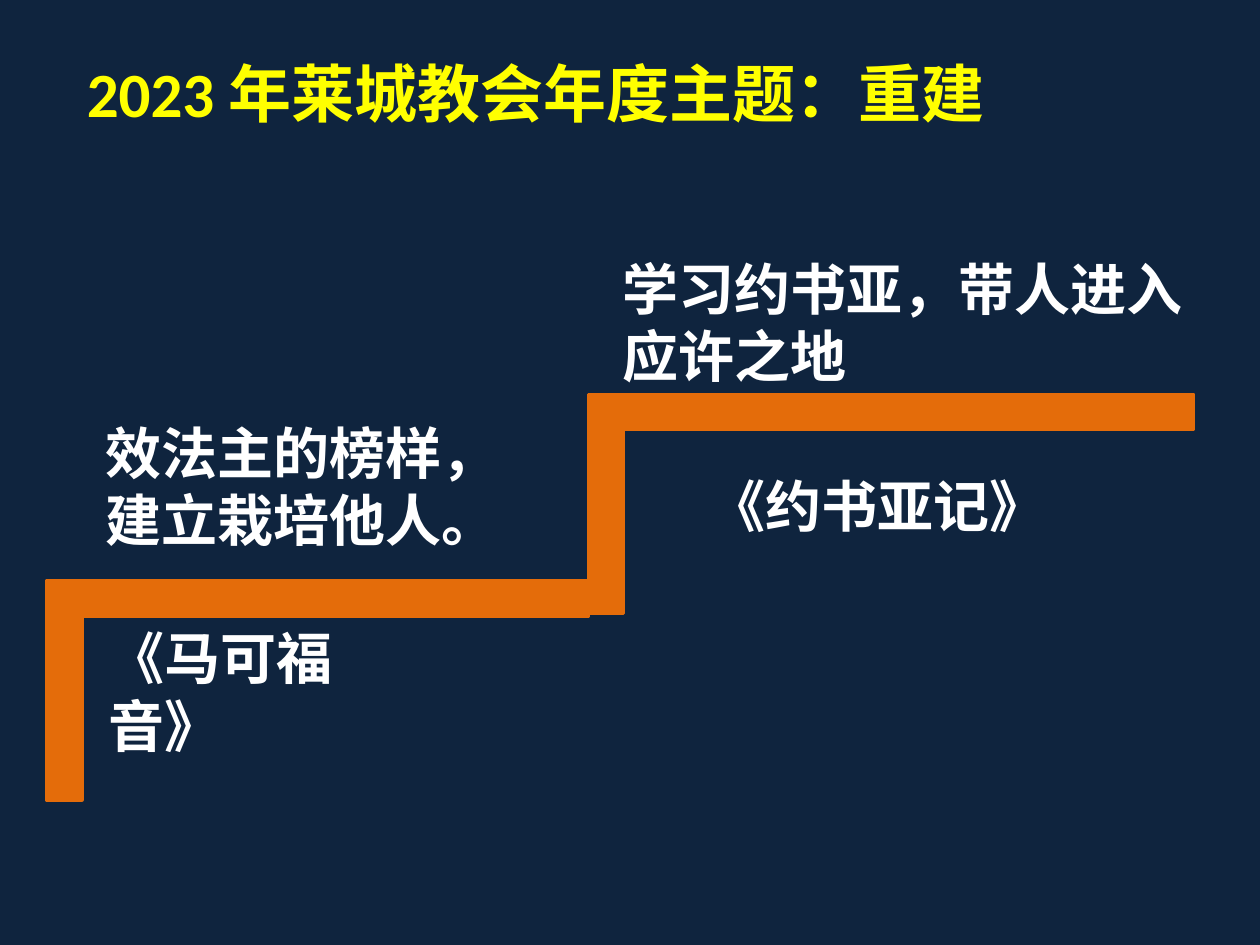
import pptx
import pptx.util
import pptx.dml.color
import pptx.enum.shapes
import pptx.enum.text

Pt = pptx.util.Pt
RGBColor = pptx.dml.color.RGBColor
NAVY = RGBColor(0x0F, 0x24, 0x3E)
ORANGE = RGBColor(0xE4, 0x6C, 0x0A)
YELLOW = RGBColor(0xFF, 0xFF, 0x00)
WHITE = RGBColor(0xFF, 0xFF, 0xFF)

prs = pptx.Presentation()
prs.slide_width, prs.slide_height = Pt(720), Pt(540)
s = prs.slides.add_slide(prs.slide_layouts[6])
s.background.fill.solid()
s.background.fill.fore_color.rgb = NAVY

steps = [
    (118.8, 239.76, 125.28, 309.6),
    (446.4, 115.2, 125.28, 345.6),
]
for box in steps:
    sp = s.shapes.add_shape(pptx.enum.shapes.MSO_SHAPE.CORNER, *map(Pt, box))
    sp.rotation = 90
    sp.shadow.inherit = False
    for i in range(2):
        sp.adjustments[i] = 0.16
    sp.fill.solid()
    sp.fill.fore_color.rgb = ORANGE
    sp.line.color.rgb = ORANGE
    sp.line.width = Pt(2)

texts = [
    ("2023 年莱城教会年度主题：重建", (42.48, 0, 677.52, 145.44), 36, YELLOW, 43.6),
    ("《马可福音》", (54.72, 369.36, 187.2, 51.12), 32, WHITE, 3.6),
    ("效法主的榜样，建立栽培他人。", (53.28, 252, 235.44, 51.12), 32, WHITE, 3.6),
    ("《约书亚记》", (398.16, 262.8, 232.56, 51.12), 32, WHITE, 3.6),
    ("学习约书亚，带人进入应许之地", (348.48, 158.4, 336.96, 51.12), 32, WHITE, 3.6),
]
for text, box, size, color, bottom in texts:
    tf = s.shapes.add_textbox(*map(Pt, box)).text_frame
    frame = {
        "word_wrap": True,
        "vertical_anchor": pptx.enum.text.MSO_ANCHOR.MIDDLE,
        "margin_bottom": Pt(bottom),
    }
    for name, value in frame.items():
        setattr(tf, name, value)
    r = tf.paragraphs[0].add_run()
    r.text = text
    for name, value in {"name": "Calibri", "size": Pt(size), "bold": True}.items():
        setattr(r.font, name, value)
    r.font.color.rgb = color

prs.save("out.pptx")
